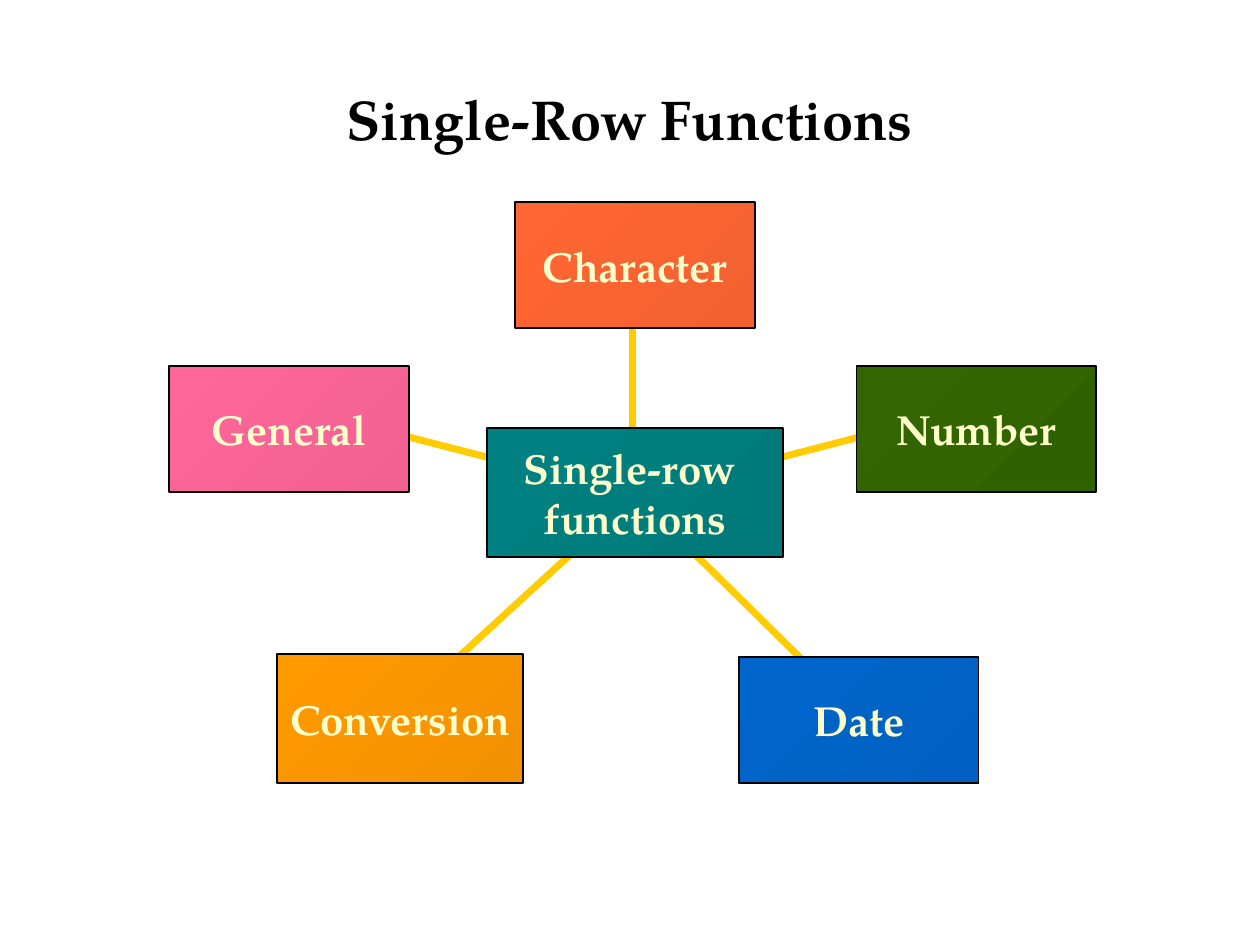
from lxml import etree
from pptx import Presentation
from pptx.dml.color import RGBColor
from pptx.enum.shapes import MSO_CONNECTOR, MSO_SHAPE
from pptx.enum.text import MSO_ANCHOR, PP_ALIGN
from pptx.oxml.ns import qn
from pptx.util import Pt

STRAIGHT = MSO_CONNECTOR.STRAIGHT
RECTANGLE = MSO_SHAPE.RECTANGLE
TOP, MIDDLE = MSO_ANCHOR.TOP, MSO_ANCHOR.MIDDLE
CENTER = PP_ALIGN.CENTER

FONT = "TeX Gyre Pagella"
BLACK = RGBColor(0x00, 0x00, 0x00)
CREAM = RGBColor(0xFF, 0xFF, 0xCC)
GOLD = RGBColor(0xFF, 0xCC, 0x00)
AMBER = RGBColor(0xFF, 0x99, 0x00)
ORANGE = RGBColor(0xFF, 0x66, 0x33)
GREEN = RGBColor(0x33, 0x66, 0x00)
BLUE = RGBColor(0x00, 0x66, 0xCC)
PINK = RGBColor(0xFF, 0x66, 0x99)
TEAL = RGBColor(0x00, 0x80, 0x80)


def add_text(paragraph, text, size, color):
    paragraph.alignment = CENTER
    run = paragraph.add_run()
    run.text = text
    run.font.name = FONT
    run.font.size = Pt(size)
    run.font.bold = True
    run.font.color.rgb = color


presentation = Presentation()
presentation.slide_width = Pt(720)
presentation.slide_height = Pt(540)
slide = presentation.slides.add_slide(presentation.slide_layouts[5])

# Title
title = slide.shapes.title
title.left, title.top, title.width, title.height = Pt(72.7), Pt(44.6), Pt(574.6), Pt(69.1)
title.text_frame.vertical_anchor = TOP
add_text(title.text_frame.paragraphs[0], "Single-Row Functions", 32, BLACK)

# Spokes from the hub to each category: start x, end x, end y
HUB_Y = 283
spokes = [
    (361.4, 361.4, 171.4),
    (362.9, 208.8, 243.4),
    (362.9, 521.3, 241.9),
    (362.9, 225.4, 409),
    (362.9, 494.6, 412.6),
]
for start_x, end_x, end_y in spokes:
    spoke = slide.shapes.add_connector(STRAIGHT, Pt(start_x), Pt(HUB_Y), Pt(end_x), Pt(end_y))
    spoke.line.color.rgb = GOLD
    spoke.line.width = Pt(4)
    etree.SubElement(spoke._element.spPr, qn("a:effectLst"))

# Category boxes, then the hub: lines, left, top, width, height, color
boxes = [
    (["Conversion"], 158.4, 373.9, 140.6, 73.4, AMBER),
    (["Character"], 294.3, 115.6, 137, 72, ORANGE),
    (["Number"], 489.4, 209, 137, 72, GREEN),
    (["Date"], 422.2, 375.5, 137, 72, BLUE),
    (["General"], 96.6, 209, 137, 72, PINK),
    (["Single-row ", "functions"], 278.1, 244.7, 169.5, 73.6, TEAL),
]
for lines, left, top, width, height, color in boxes:
    box = slide.shapes.add_shape(RECTANGLE, Pt(left), Pt(top), Pt(width), Pt(height))
    box.shadow.inherit = False
    box.line.color.rgb = BLACK
    box.line.width = Pt(1)

    # Diagonal gradient that darkens slightly towards the bottom right
    box.fill.gradient()
    box.fill.gradient_angle = 315
    for stop in box.fill.gradient_stops:
        stop.color.rgb = color
    end_color = box._element.spPr.findall(".//" + qn("a:srgbClr"))[1]
    etree.SubElement(end_color, qn("a:shade"), val="90000")

    frame = box.text_frame
    frame.word_wrap = False
    frame.vertical_anchor = MIDDLE
    for index, line in enumerate(lines):
        paragraph = frame.add_paragraph() if index else frame.paragraphs[0]
        add_text(paragraph, line, 24, CREAM)

presentation.save("out.pptx")
